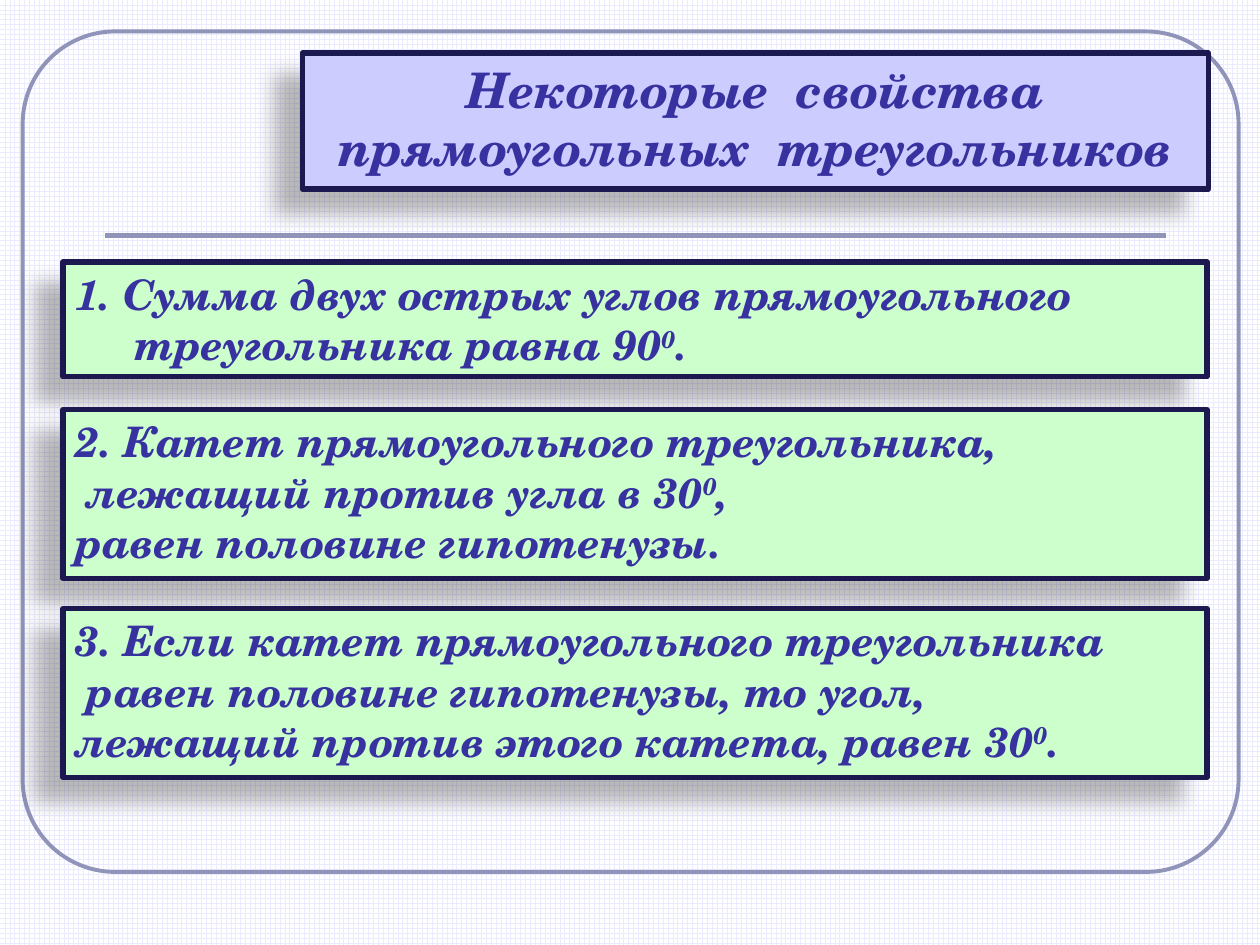
from lxml.etree import SubElement as Sub
from pptx import Presentation
from pptx.dml.color import RGBColor as RGB
from pptx.enum.dml import MSO_PATTERN as Pat
from pptx.enum.shapes import MSO_CONNECTOR as Conn, MSO_SHAPE as Geo
from pptx.enum.text import MSO_ANCHOR as Anchor, MSO_AUTO_SIZE as Fit, PP_ALIGN as Align
from pptx.oxml.ns import qn
from pptx.util import Inches, Pt

COLORS = {
    "grid": "EBEBFF", "paper": "FFFFFF", "frame": "9094B8", "edge": "1C1950",
    "title": "CCCCFF", "rule": "CCFFCC", "text": "3732A0", "shade": "000000",
}
FONT = {"name": "TeX Gyre Schola", "bold": True, "italic": True}
HANG = 0.38
STEP = 0.09

# Each line: left margin, first-line indent, text; ⁰ marks a raised zero.
RULES = [
    (2.08, 0.91, True, [
        (HANG, -HANG, "Сумма двух острых углов прямоугольного"),
        (0.47, 0, "треугольника равна 90⁰."),
    ]),
    (3.25, 1.34, False, [
        (0, 0, "2. Катет прямоугольного треугольника,"),
        (STEP, 0, "лежащий против угла в 30⁰,"),
        (0, 0, "равен половине гипотенузы."),
    ]),
    (4.83, 1.34, False, [
        (0, 0, "3. Если катет прямоугольного треугольника"),
        (STEP, 0, "равен половине гипотенузы, то угол,"),
        (0, 0, "лежащий против этого катета, равен 30⁰."),
    ]),
]
TITLE = [(0, 0, "Некоторые  свойства"), (0, 0, "прямоугольных  треугольников")]


def color(name):
    return RGB.from_string(COLORS[name])


class Board:
    def __init__(self, slide):
        self.slide = slide

    def back(self):
        fill = self.slide.background.fill
        fill.patterned()
        fill.pattern = Pat.LARGE_GRID
        fill.fore_color.rgb = color("grid")
        fill.back_color.rgb = color("paper")

    def stroke(self, item, name, width):
        item.line.color.rgb = color(name)
        item.line.width = Pt(width)

    def frame(self, x, y, w, h):
        item = self.slide.shapes.add_shape(
            Geo.ROUNDED_RECTANGLE, Inches(x), Inches(y), Inches(w), Inches(h))
        item.adjustments[0] = 0.11
        item.shadow.inherit = False
        item.fill.background()
        self.stroke(item, "frame", 2.25)

    def line(self, x, y, end):
        item = self.slide.shapes.add_connector(
            Conn.STRAIGHT, Inches(x), Inches(y), Inches(end), Inches(y))
        self.stroke(item, "frame", 3)
        Sub(item._element.spPr, qn("a:effectLst"))

    def shade(self, item):
        """Cast a soft shadow down and to the left."""
        item.shadow.inherit = False
        effects = item._element.spPr.find(qn("a:effectLst"))
        outer = Sub(effects, qn("a:outerShdw"), blurRad=str(Pt(11.8)),
                    dist=str(Pt(19.7)), dir=str(141 * 60000), rotWithShape="0")
        tint = Sub(outer, qn("a:srgbClr"), val=COLORS["shade"])
        Sub(tint, qn("a:alpha"), val="28000")

    def run(self, para, text, size, raised=False):
        run = para.add_run()
        run.text = text
        for key, value in {**FONT, "size": Pt(size)}.items():
            setattr(run.font, key, value)
        run.font.color.rgb = color("text")
        if raised:
            run._r.get_or_add_rPr().set("baseline", "30000")

    def text(self, para, words, size):
        for i, part in enumerate(words.split("⁰")):
            if i:
                self.run(para, "0", size, raised=True)
            self.run(para, part, size)

    def box(self, place, fill, lines, size, align=Align.LEFT, wrap=True, count=False):
        """Draw a shaded box; count numbers its first line automatically."""
        item = self.slide.shapes.add_shape(Geo.RECTANGLE, *map(Inches, place))
        item.fill.solid()
        item.fill.fore_color.rgb = color(fill)
        self.stroke(item, "edge", 3)
        self.shade(item)
        frame = item.text_frame
        style = {"word_wrap": wrap, "auto_size": Fit.SHAPE_TO_FIT_TEXT,
                 "vertical_anchor": Anchor.TOP}
        for key, value in style.items():
            setattr(frame, key, value)
        for i, (left, first, words) in enumerate(lines):
            para = frame.add_paragraph() if i else frame.paragraphs[0]
            para.alignment = align
            props = para._p.get_or_add_pPr()
            props.set("marL", str(Inches(left)))
            props.set("indent", str(Inches(first)))
            if count and i == 0:
                Sub(props, qn("a:buFont"), typeface="+mj-lt")
                Sub(props, qn("a:buAutoNum"), type="arabicPeriod")
            self.text(para, words, size)


def main():
    deck = Presentation()
    deck.slide_width, deck.slide_height = Inches(10), Inches(7.5)
    board = Board(deck.slides.add_slide(deck.slide_layouts[6]))
    board.back()
    board.frame(0.18, 0.25, 9.65, 6.67)
    board.line(0.83, 1.87, 9.25)
    board.box((2.4, 0.42, 7.19, 1.08), "title", TITLE, 28, Align.CENTER, wrap=False)
    for top, height, count, lines in RULES:
        board.box((0.5, top, 9.08, height), "rule", lines, 24, count=count)
    deck.save("out.pptx")


if __name__ == "__main__":
    main()
